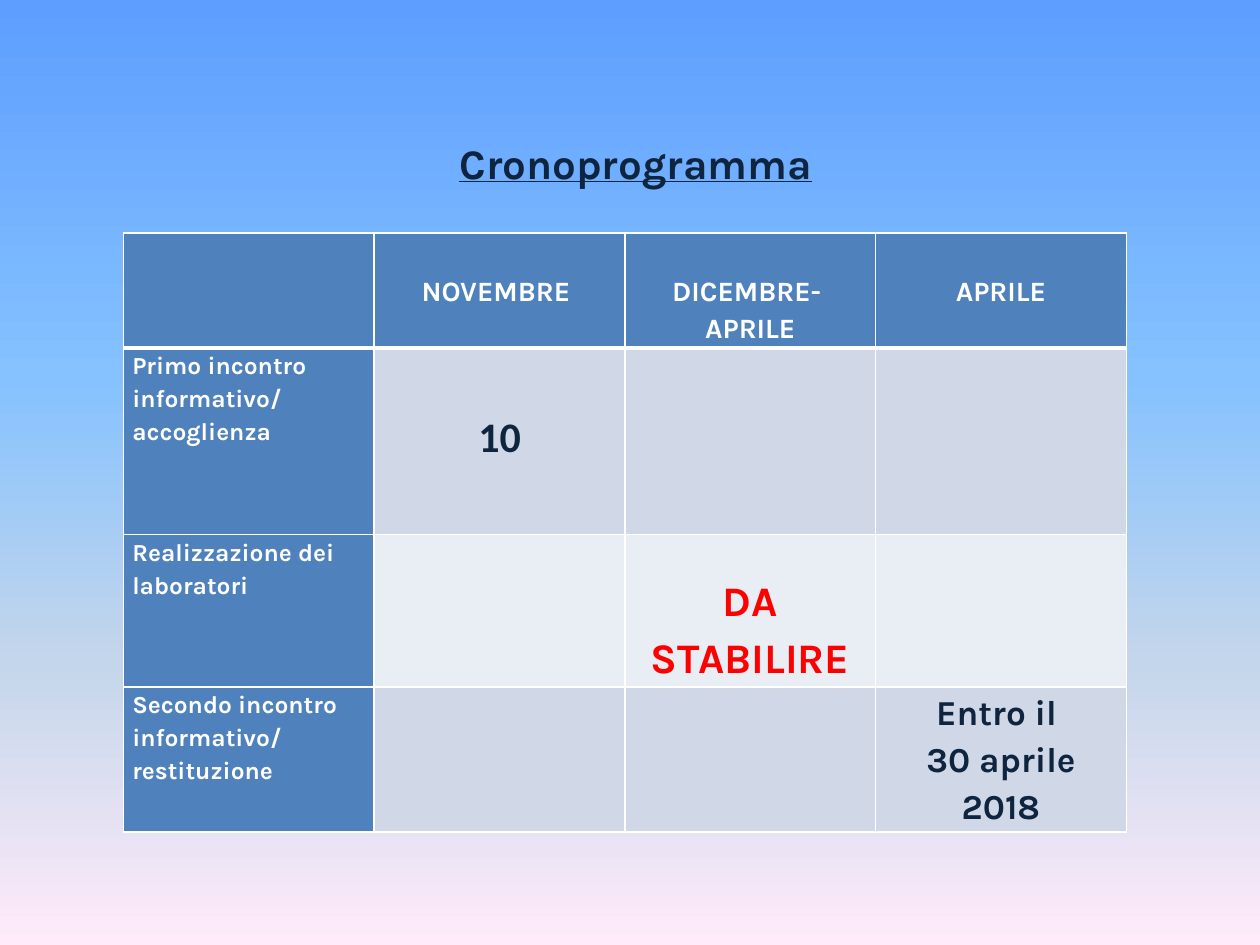
from lxml.etree import SubElement
from pptx import Presentation
from pptx.dml.color import RGBColor
from pptx.enum.text import PP_ALIGN as Align
from pptx.oxml import parse_xml
from pptx.oxml.ns import nsdecls, qn
from pptx.util import Inches, Pt

NAVY = RGBColor(0x0F, 0x24, 0x3E)
WHITE = RGBColor(0xFF, 0xFF, 0xFF)
RED = RGBColor(0xFF, 0x00, 0x00)
BLUE = RGBColor(0x4F, 0x81, 0xBD)
BANDS = [RGBColor(0xD0, 0xD8, 0xE8), RGBColor(0xE9, 0xED, 0xF4)]
SKY = [(0, RGBColor(0x5E, 0x9E, 0xFF)), (40, RGBColor(0x85, 0xC2, 0xFF)),
       (70, RGBColor(0xC4, 0xD6, 0xEB)), (100, RGBColor(0xFF, 0xEB, 0xFA))]

COLUMN_WIDTH = 1.99
ROW_HEIGHTS = [0.88, 1.48, 1.15, 1.15]
HEADERS = ["", "NOVEMBRE ", "DICEMBRE-  APRILE", "APRILE"]
STEPS = ["Primo incontro informativo/ accoglienza",
         "Realizzazione dei laboratori",
         "Secondo incontro informativo/ restituzione"]
# (row, column): text, size, font, colour, top margin
DATES = {(1, 1): ("10", 24, "Calibri", NAVY, 0.45),
         (2, 2): ("DA STABILIRE", 24, "Karla", RED, 0.29),
         (3, 3): ("Entro il \n30 aprile 2018", 20, "Karla", NAVY, 0)}


def write(frame, text, size, font, color, align, spacing=1.15):
    """Fill a text frame with bold text in one format."""
    frame.text = text
    frame.word_wrap = True
    for para in frame.paragraphs:
        para.alignment = align
        para.line_spacing = spacing
        for span in para.runs:
            span.font.size = Pt(size)
            span.font.name = font
            span.font.bold = True
            span.font.color.rgb = color


def set_borders(cell, bottom_width):
    """Draw white cell borders; they must come before the fill in the XML."""
    properties = cell._tc.get_or_add_tcPr()
    for index, side in enumerate("LRTB"):
        width = Pt(bottom_width if side == "B" else 1)
        line = parse_xml(f'<a:ln{side} {nsdecls("a")} w="{width}"><a:solidFill>'
                         f'<a:srgbClr val="{WHITE}"/></a:solidFill></a:ln{side}>')
        properties.insert(index, line)


deck = Presentation()
deck.slide_width, deck.slide_height = Inches(10), Inches(7.5)
page = deck.slides.add_slide(deck.slide_layouts[6])

# Sky gradient, from top to bottom
sky = page.background.fill
sky.gradient()
sky.gradient_angle = 270
stops = page.background._cSld.find(".//" + qn("a:gsLst"))
for stop in list(stops):
    stops.remove(stop)
for position, color in SKY:
    stop = SubElement(stops, qn("a:gs"), pos=str(position * 1000))
    SubElement(stop, qn("a:srgbClr"), val=str(color))

title = page.shapes.add_textbox(Inches(0.87), Inches(1.04), Inches(8.35), Inches(0.81))
write(title.text_frame, "Cronoprogramma", 24, "Karla", NAVY, Align.CENTER, 1)
title.text_frame.paragraphs[0].runs[0].font.underline = True

schedule = page.shapes.add_table(
    len(ROW_HEIGHTS), len(HEADERS), Inches(0.98), Inches(1.85),
    Inches(COLUMN_WIDTH * len(HEADERS)), Inches(sum(ROW_HEIGHTS))).table
schedule.first_col = True
for column in schedule.columns:
    column.width = Inches(COLUMN_WIDTH)

for row, height in enumerate(ROW_HEIGHTS):
    schedule.rows[row].height = Inches(height)
    for column, header in enumerate(HEADERS):
        cell = schedule.cell(row, column)
        cell.margin_left = cell.margin_right = Inches(0.07)
        cell.margin_top = cell.margin_bottom = 0
        cell.fill.solid()
        is_heading = row == 0 or column == 0
        cell.fill.fore_color.rgb = BLUE if is_heading else BANDS[(row - 1) % 2]
        # The rule under the header row is thicker
        set_borders(cell, 3 if row == 0 else 1)
        if row == 0 and header:
            cell.margin_top = Inches(0.3)
            write(cell.text_frame, header, 16, "Karla", WHITE, Align.CENTER)
        elif row > 0 and column == 0:
            write(cell.text_frame, STEPS[row - 1], 14, "Karla", WHITE, Align.LEFT)
        elif (row, column) in DATES:
            text, size, font, color, top = DATES[row, column]
            cell.margin_top = Inches(top)
            write(cell.text_frame, text, size, font, color, Align.CENTER)

deck.save("out.pptx")
